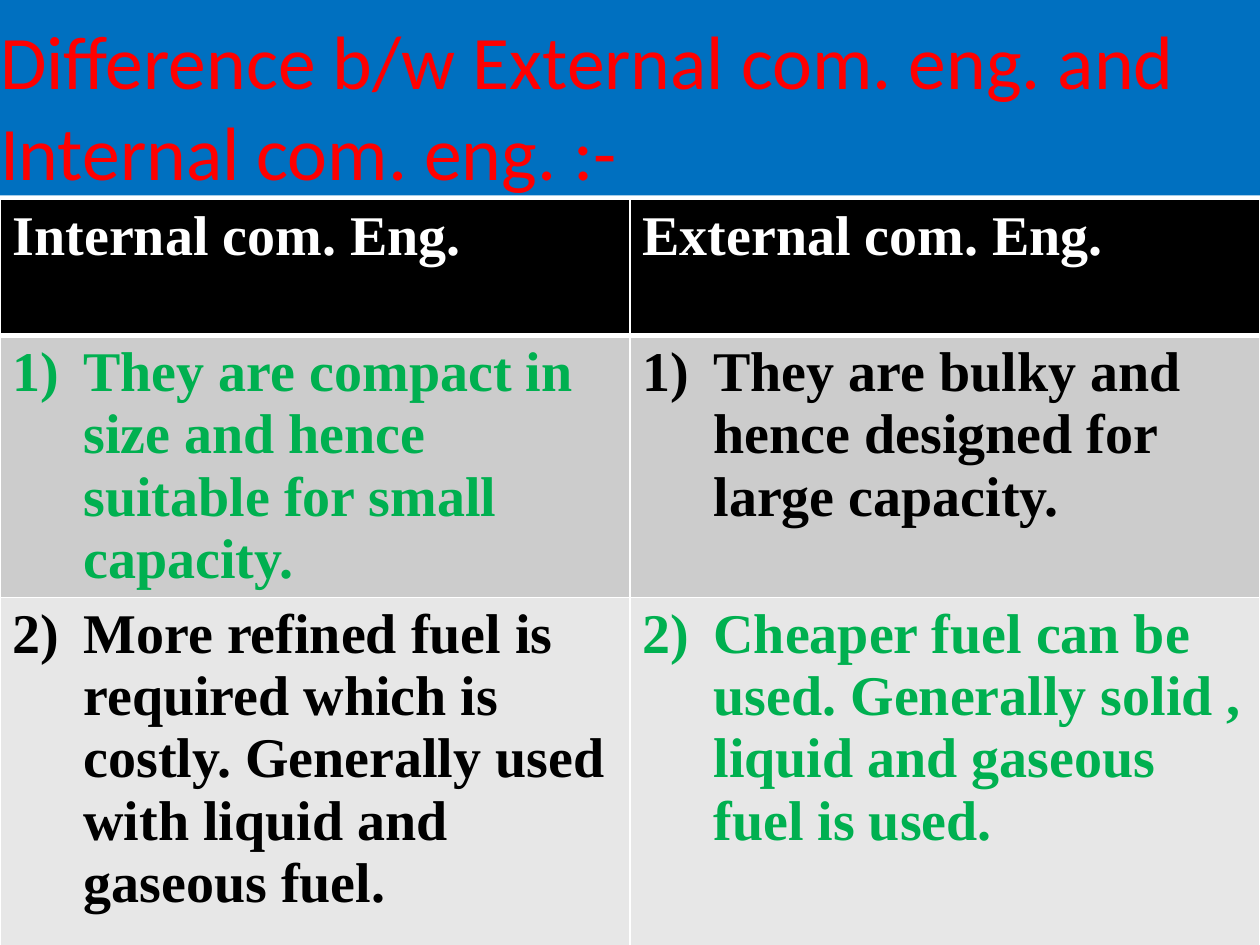
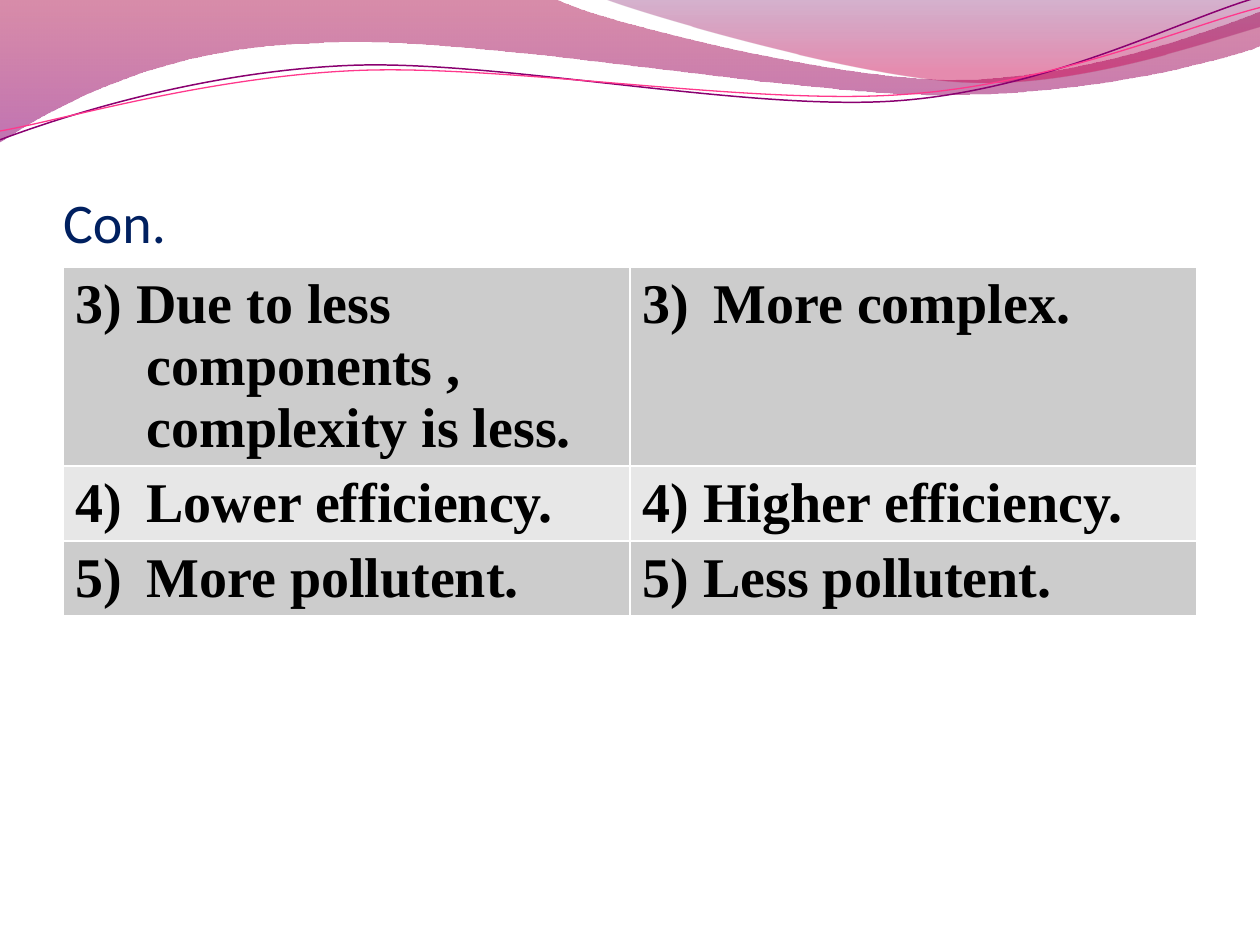
from lxml import etree
from pptx import Presentation
from pptx.dml.color import RGBColor
from pptx.enum import text as txt
from pptx.oxml.ns import qn
from pptx.util import Cm, Pt

WHITE, BLACK, GREEN = "FFFFFF", "000000", "00B050"
DARK_BAND, LIGHT_BAND = "CCCCCC", "E7E7E7"
HANGING = Cm(1.43)


def rgb(color):
    return RGBColor.from_string(color)


def add_text(paragraph, words, size, font, color, bold=False):
    run = paragraph.add_run()
    run.text = words
    run.font.size = Pt(size)
    run.font.name = font
    run.font.bold = bold
    run.font.color.rgb = rgb(color)


prs = Presentation()
prs.slide_width, prs.slide_height = Cm(25.4), Cm(19.05)

# Cells hold wording, colour and number: None is plain text,
# 0 is a hanging indent only, anything else is an automatic number.
pages = [
    {
        "title": "Difference b/w External com. eng. and Internal com. eng. :-",
        "title_box": (0, 0, 25.4, 3.94), "title_size": 43.2,
        "title_color": "FF0000", "title_fill": "0070C0",
        "table_at": (0, 4.02, 25.4), "row_heights": [2.74, 5.28, 7.67],
        "bands": [BLACK, DARK_BAND, LIGHT_BAND], "header": True,
        "rows": [
            [("Internal com. Eng.", WHITE, None),
             ("External com. Eng.", WHITE, None)],
            [("They are compact in size and hence suitable for small capacity.", GREEN, 1),
             ("They are bulky and hence designed for large capacity.", BLACK, 1)],
            [("More refined fuel is required which is costly. "
              "Generally used with liquid and gaseous fuel.", BLACK, 2),
             ("Cheaper fuel can be used. Generally solid , "
              "liquid and gaseous fuel is used.", GREEN, 2)],
        ],
    },
    {
        "title": "Con.",
        "title_box": (1.27, 1.96, 22.86, 3.18), "title_size": 32,
        "title_color": "002060", "title_fill": None,
        "table_at": (1.27, 5.38, 22.86), "row_heights": [4.01, 1.5, 1.5],
        "bands": [DARK_BAND, LIGHT_BAND, DARK_BAND], "header": False,
        "rows": [
            [("3) Due to less components , complexity is less.", BLACK, 0),
             ("More complex.", BLACK, 3)],
            [("Lower efficiency.", BLACK, 4), ("4) Higher efficiency.", BLACK, None)],
            [("More pollutent.", BLACK, 5), ("5) Less pollutent.", BLACK, None)],
        ],
    },
]
slides = [prs.slides.add_slide(prs.slide_layouts[5]) for _ in pages]

# Waves shared through the master, in hundredths of an inch. The first segment
# is the start; later ones are a line (one point) or a Bézier curve (three).
waves = [
    {"segments": [
        [(0, 0)], [(440, -1)],
        [(476, 17), (664, 63), (758, 63)], [(853, 63), (958, 26), (1000, 9)],
        [(1001, 36)],
        [(983, 44), (870, 76), (746, 75)], [(622, 75), (382, 28), (257, 34)],
        [(129, 36), (46, 83), (-1, 113)], [(0, 0)]],
     "stops": [(0, "A90042", 45), (1, "8E0073", 55)]},
    {"segments": [
        [(479, -1)],
        [(509, 11), (682, 62), (769, 65)], [(856, 69), (961, 32), (1000, 21)],
        [(1000, 0)], [(479, -1)]],
     "stops": [(0, "73005E", 30), (0.8, "C9004F", 45)]},
    {"segments": [
        [(0, 111)],
        [(48, 93), (158, 57), (277, 52)], [(395, 47), (593, 89), (713, 80)],
        [(833, 71), (938, 15), (998, -2)]],
     "line": ("8A0070", 0.85)},
    {"segments": [
        [(0, 104)],
        [(47, 96), (164, 61), (283, 56)], [(403, 51), (597, 84), (717, 75)],
        [(836, 67), (941, 21), (1000, 6)]],
     "line": ("FF388C", 0.75)},
]
for order, wave in enumerate(waves):
    start, *segments = wave["segments"]
    builder = slides[0].shapes.build_freeform(*start[0], scale=Cm(0.0254))
    builder.add_line_segments([point for segment in segments for point in segment],
                              close="stops" in wave)
    ribbon = builder.convert_to_shape()
    ribbon.shadow.inherit = False

    outline = next(ribbon.element.iter(qn("a:path")))
    steps = iter(outline.findall(qn("a:lnTo")))
    for segment in segments:
        corners = [next(steps) for _ in segment]
        if len(segment) == 3:
            curve = etree.Element(qn("a:cubicBezTo"))
            corners[0].addprevious(curve)
            for corner in corners:
                curve.append(corner[0])
                outline.remove(corner)

    if "stops" in wave:
        ribbon.line.fill.background()
        ribbon.fill.gradient()
        ribbon.fill.gradient_angle = 270
        for stop, (position, color, _) in zip(ribbon.fill.gradient_stops, wave["stops"]):
            stop.position = position
            stop.color.rgb = rgb(color)
        for tint, (_, _, opacity) in zip(ribbon.element.iter(qn("a:srgbClr")), wave["stops"]):
            etree.SubElement(tint, qn("a:alpha"), val=str(opacity * 1000))
    else:
        color, width = wave["line"]
        ribbon.fill.background()
        ribbon.line.color.rgb = rgb(color)
        ribbon.line.width = Pt(width)

    ribbon.element.nvSpPr.cNvPr.set("id", str(20 + order))
    prs.slide_master.shapes.element.insert(2 + order, ribbon.element)

for slide, page in zip(slides, pages):
    title = slide.shapes.title
    title.left, title.top, title.width, title.height = map(Cm, page["title_box"])
    if page["title_fill"]:
        title.fill.solid()
        title.fill.fore_color.rgb = rgb(page["title_fill"])
    frame = title.text_frame
    frame.word_wrap = True
    frame.auto_size = txt.MSO_AUTO_SIZE.NONE
    frame.vertical_anchor = txt.MSO_ANCHOR.BOTTOM
    frame.margin_left = frame.margin_right = frame.margin_bottom = 0
    frame.paragraphs[0].alignment = txt.PP_ALIGN.LEFT
    add_text(frame.paragraphs[0], page["title"], page["title_size"], "Calibri",
             page["title_color"])

    left, top, width = map(Cm, page["table_at"])
    comparison = slide.shapes.add_table(
        3, 2, left, top, width, Cm(sum(page["row_heights"]))).table
    comparison.first_row = page["header"]
    for r, (height, band, row) in enumerate(
            zip(page["row_heights"], page["bands"], page["rows"])):
        comparison.rows[r].height = Cm(height)
        for c, (words, color, number) in enumerate(row):
            cell = comparison.cell(r, c)
            cell.fill.solid()
            cell.fill.fore_color.rgb = rgb(band)

            cell_format = cell._tc.get_or_add_tcPr()
            for place, side in enumerate(("lnL", "lnR", "lnT", "lnB")):
                under_header = page["header"] and (r, side) in ((0, "lnB"), (1, "lnT"))
                border = etree.Element(qn("a:" + side), w=str(Pt(3 if under_header else 1)))
                ink = etree.SubElement(border, qn("a:solidFill"))
                etree.SubElement(ink, qn("a:srgbClr"), val=WHITE)
                cell_format.insert(place, border)

            paragraph = cell.text_frame.paragraphs[0]
            add_text(paragraph, words, 32, "Times New Roman", color, bold=True)
            if number is not None:
                layout = paragraph._p.get_or_add_pPr()
                layout.set("marL", str(HANGING))
                layout.set("indent", str(-HANGING))
                if number:
                    etree.SubElement(layout, qn("a:buAutoNum"), type="arabicParenR",
                                     startAt=str(number))

prs.save("out.pptx")
